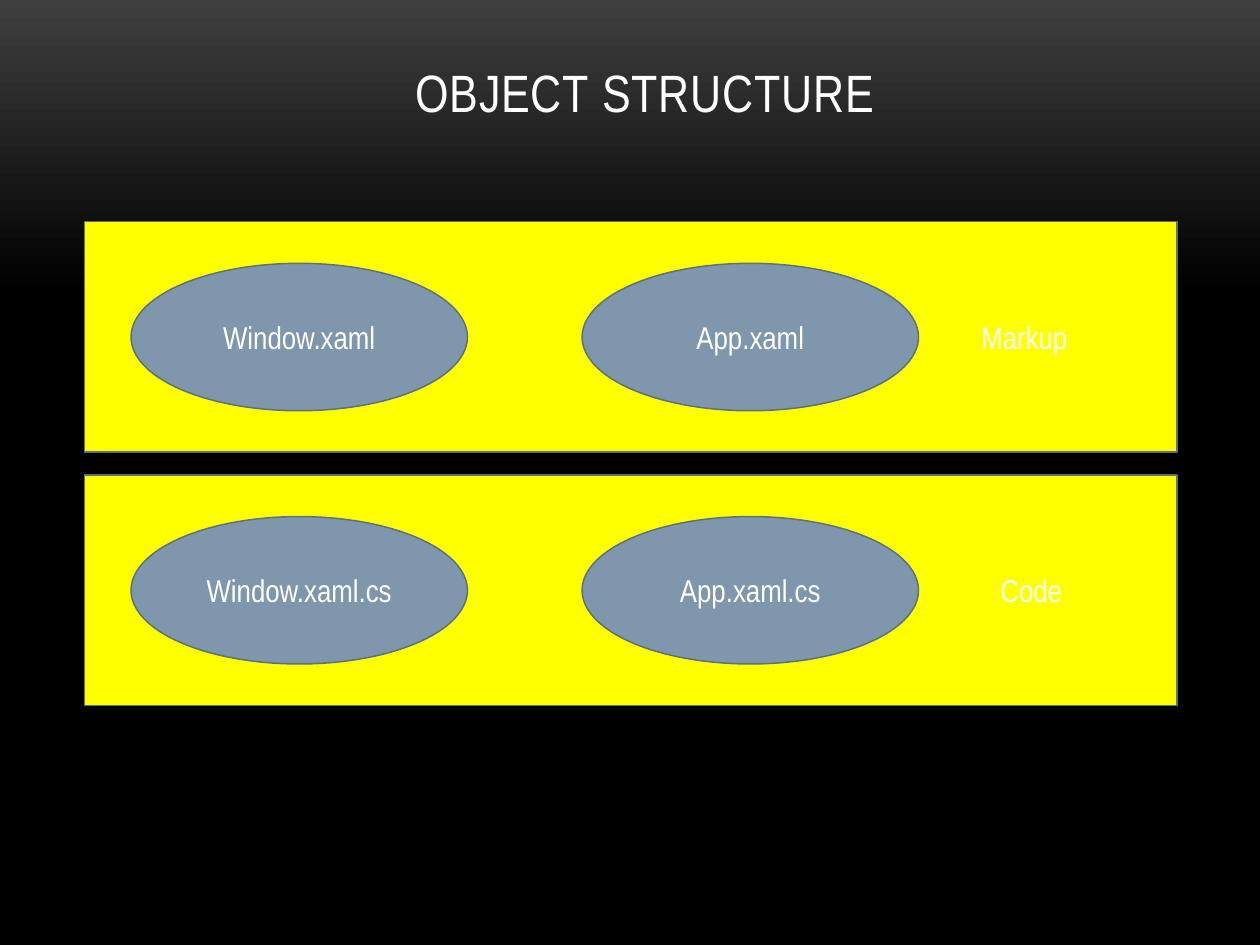
from copy import deepcopy

from pptx import Presentation
from pptx.dml.color import RGBColor
from pptx.enum.shapes import MSO_SHAPE
from pptx.enum.text import MSO_ANCHOR, MSO_AUTO_SIZE, PP_ALIGN
from pptx.oxml.ns import qn
from pptx.util import Inches, Pt

FONT = "Arial Narrow"
WHITE = RGBColor(0xFF, 0xFF, 0xFF)
BLACK = RGBColor(0x00, 0x00, 0x00)
CHARCOAL = RGBColor(0x3F, 0x3F, 0x3F)
YELLOW = RGBColor(0xFF, 0xFF, 0x00)
STEEL = RGBColor(0x7E, 0x97, 0xAD)
OUTLINE = RGBColor(0x5D, 0x70, 0x80)

TITLE = "OBJECT STRUCTURE"
# Each layer: files, label, label left, label width, label alignment
LAYERS = [
    (("Window.xaml", "App.xaml"), "Markup", 7.69, 1.0, PP_ALIGN.LEFT),
    (("Window.xaml.cs", "App.xaml.cs"), "Code", 7.82, 0.73, PP_ALIGN.CENTER),
]

BAND_LEFT, BAND_TOP, BAND_WIDTH, BAND_HEIGHT = 0.67, 1.76, 8.67, 1.83
BAND_STEP = 2.01
FILE_LEFT, FILE_WIDTH, FILE_HEIGHT = 1.04, 2.67, 1.17
FILE_STEP = 3.58
LABEL_HEIGHT = 0.4


def set_background(slide):
    fill = slide.background.fill
    fill.gradient()
    fill.gradient_angle = 270
    stop_list = next(slide.element.iter(qn("a:gsLst")))
    stop_list.append(deepcopy(stop_list[-1]))
    stops = [(0, CHARCOAL), (0.31, BLACK), (1, BLACK)]
    for stop, (position, color) in zip(fill.gradient_stops, stops):
        stop.position = position
        stop.color.rgb = color


def write(shape, text, size, alignment=PP_ALIGN.CENTER):
    para = shape.text_frame.paragraphs[0]
    span = para.add_run()
    span.text = text
    para.alignment = alignment
    para.font.name = FONT
    para.font.size = Pt(size)
    para.font.color.rgb = WHITE
    return span


def add_outlined(slide, kind, left, top, width, height, color):
    shape = slide.shapes.add_shape(
        kind, Inches(left), Inches(top), Inches(width), Inches(height))
    shape.shadow.inherit = False
    shape.fill.solid()
    shape.fill.fore_color.rgb = color
    shape.line.color.rgb = OUTLINE
    shape.line.width = Pt(0.85)
    return shape


def add_title(slide):
    title = slide.shapes.title
    title.left, title.top = Inches(0.62), Inches(0.33)
    title.width, title.height = Inches(9), Inches(0.7)
    title.text_frame.vertical_anchor = MSO_ANCHOR.BOTTOM
    span = write(title, TITLE, 30)
    span.font.size = Pt(30)
    span.font.element.set("spc", "50") if hasattr(span.font, "element") else \
        span._r.get_or_add_rPr().set("spc", "50")


def add_layer(slide, top, files, label, label_left, label_width, alignment):
    add_outlined(slide, MSO_SHAPE.RECTANGLE,
                 BAND_LEFT, top, BAND_WIDTH, BAND_HEIGHT, YELLOW)
    file_top = top + (BAND_HEIGHT - FILE_HEIGHT) / 2
    for column, name in enumerate(files):
        oval = add_outlined(slide, MSO_SHAPE.OVAL,
                            FILE_LEFT + column * FILE_STEP, file_top,
                            FILE_WIDTH, FILE_HEIGHT, STEEL)
        oval.text_frame.vertical_anchor = MSO_ANCHOR.MIDDLE
        write(oval, name, 18)
    label_top = top + (BAND_HEIGHT - LABEL_HEIGHT) / 2
    box = slide.shapes.add_textbox(Inches(label_left), Inches(label_top),
                                   Inches(label_width), Inches(LABEL_HEIGHT))
    box.text_frame.word_wrap = False
    box.text_frame.auto_size = MSO_AUTO_SIZE.SHAPE_TO_FIT_TEXT
    write(box, label, 18, alignment)


def main():
    deck = Presentation()
    deck.slide_width, deck.slide_height = Inches(10), Inches(7.5)
    slide = deck.slides.add_slide(deck.slide_layouts[5])
    set_background(slide)
    add_title(slide)
    for row, layer in enumerate(LAYERS):
        add_layer(slide, BAND_TOP + row * BAND_STEP, *layer)
    deck.save("out.pptx")


if __name__ == "__main__":
    main()
